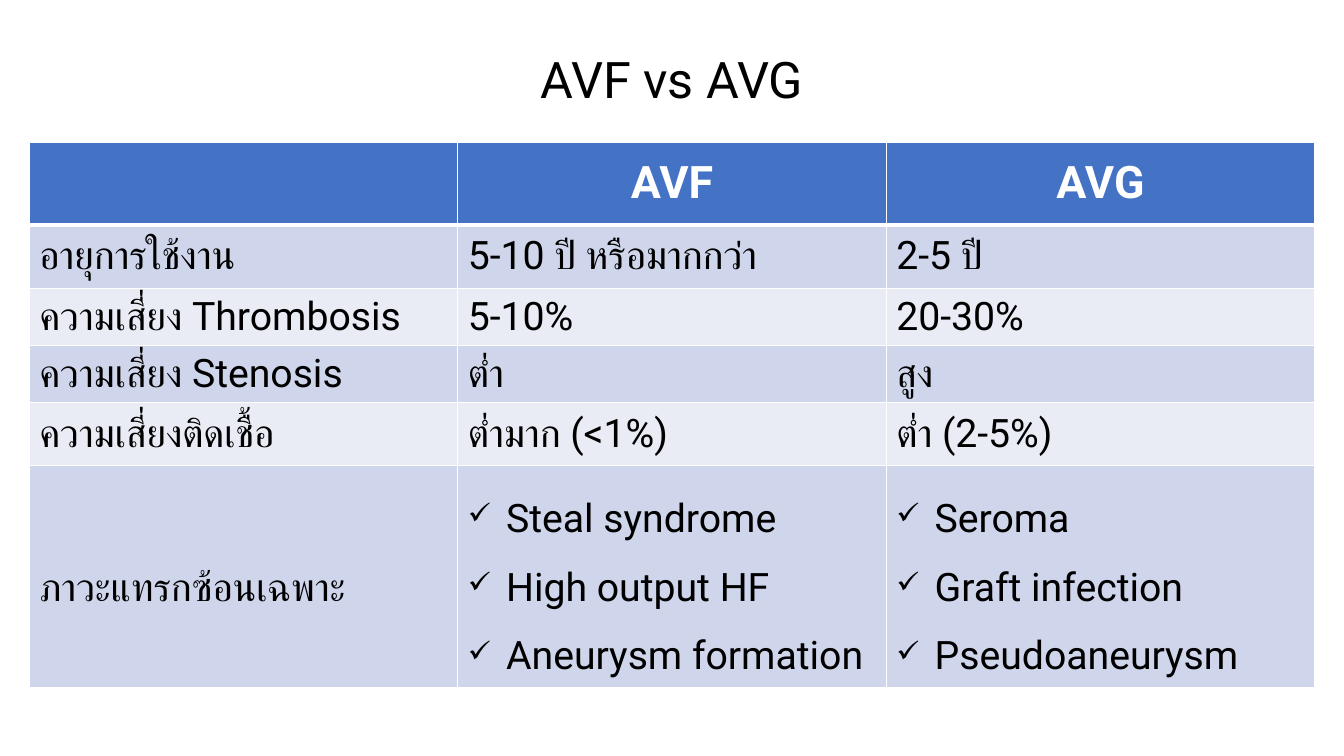
from lxml import etree
from pptx import Presentation
from pptx.dml.color import RGBColor
from pptx.enum.text import MSO_ANCHOR, MSO_AUTO_SIZE, PP_ALIGN
from pptx.oxml.ns import qn
from pptx.util import Inches, Pt

COLUMN_WIDTH = 4.25
ROW_HEIGHTS = [0.82, 0.63, 0.55, 0.57, 0.62, 2.16]
HEADINGS = ["", "AVF", "AVG"]
COMPARISON = [
    ["อายุการใช้งาน", "5-10 ปี หรือมากกว่า", "2-5 ปี"],
    ["ความเสี่ยง Thrombosis", "5-10%", "20-30%"],
    ["ความเสี่ยง Stenosis", "ต่ำ", "สูง"],
    ["ความเสี่ยงติดเชื้อ", "ต่ำมาก (<1%)", "ต่ำ (2-5%)"],
    ["ภาวะแทรกซ้อนเฉพาะ",
     ["Steal syndrome", "High output HF", "Aneurysm formation"],
     ["Seroma", "Graft infection", "Pseudoaneurysm"]],
]


def rgb(color):
    return RGBColor.from_string(color)


class SlideBuilder:
    font = "Roboto"
    black = "000000"
    white = "FFFFFF"
    header_fill = "4472C4"
    band_fills = ["CFD5EA", "E9EBF5"]

    def __init__(self, slide):
        self.slide = slide

    def add_run(self, paragraph, text, size, color, bold=False):
        run = paragraph.add_run()
        run.text = text
        run.font.size = Pt(size)
        run.font.bold = bold
        run.font.color.rgb = rgb(color)
        run.font.name = self.font
        for script in ("a:ea", "a:cs"):
            etree.SubElement(run.font._element, qn(script), typeface=self.font)

    def add_check_mark(self, paragraph):
        properties = paragraph._p.get_or_add_pPr()
        properties.set("marL", str(Inches(0.38)))
        properties.set("indent", str(Inches(-0.38)))
        etree.SubElement(properties, qn("a:buSzPct"), val="75000")
        etree.SubElement(properties, qn("a:buChar"), char="✓")

    def add_borders(self, cell, bottom_width):
        properties = cell._tc.get_or_add_tcPr()
        for side in "LRTB":
            width = bottom_width if side == "B" else 1
            line = etree.SubElement(properties, qn(f"a:ln{side}"), w=str(Pt(width)))
            fill = etree.SubElement(line, qn("a:solidFill"))
            etree.SubElement(fill, qn("a:srgbClr"), val=self.white)

    def add_title(self, text):
        box = self.slide.shapes.add_textbox(Inches(0), Inches(0.13), Inches(13.33), Inches(0.93))
        frame = box.text_frame
        frame.word_wrap = True
        frame.auto_size = MSO_AUTO_SIZE.SHAPE_TO_FIT_TEXT
        paragraph = frame.paragraphs[0]
        paragraph.alignment = PP_ALIGN.CENTER
        paragraph.line_spacing = 1.5
        self.add_run(paragraph, text, 36, self.black)

    def style_cell(self, cell, fill, bottom_width=1):
        self.add_borders(cell, bottom_width)
        cell.fill.solid()
        cell.fill.fore_color.rgb = rgb(fill)
        cell.vertical_anchor = MSO_ANCHOR.MIDDLE

    def fill_header_cell(self, cell, heading):
        self.style_cell(cell, self.header_fill, bottom_width=3)
        if heading:
            paragraph = cell.text_frame.paragraphs[0]
            paragraph.alignment = PP_ALIGN.CENTER
            self.add_run(paragraph, heading, 32, self.white, bold=True)

    def fill_body_cell(self, cell, content, fill, line_spacing):
        """Write one text, or a list of texts as check-marked lines."""
        self.style_cell(cell, fill)
        checked = isinstance(content, list)
        frame = cell.text_frame
        for index, text in enumerate(content if checked else [content]):
            paragraph = frame.add_paragraph() if index else frame.paragraphs[0]
            paragraph.line_spacing = line_spacing
            if checked:
                self.add_check_mark(paragraph)
            self.add_run(paragraph, text, 28, self.black)

    def add_comparison_table(self, headings, rows):
        shape = self.slide.shapes.add_table(
            len(rows) + 1, len(headings), Inches(0.29), Inches(1.41),
            Inches(COLUMN_WIDTH * len(headings)), Inches(sum(ROW_HEIGHTS)))
        table = shape.table
        for column in table.columns:
            column.width = Inches(COLUMN_WIDTH)
        for row, height in zip(table.rows, ROW_HEIGHTS):
            row.height = Inches(height)
        for column, heading in enumerate(headings):
            self.fill_header_cell(table.cell(0, column), heading)
        for index, contents in enumerate(rows):
            line_spacing = 1.5 if contents is rows[-1] else 1.0
            for column, content in enumerate(contents):
                self.fill_body_cell(table.cell(index + 1, column), content,
                                    self.band_fills[index % 2], line_spacing)


def main():
    presentation = Presentation()
    presentation.slide_width = Inches(13.33)
    presentation.slide_height = Inches(7.5)
    builder = SlideBuilder(presentation.slides.add_slide(presentation.slide_layouts[6]))
    builder.add_title("AVF vs AVG")
    builder.add_comparison_table(HEADINGS, COMPARISON)
    presentation.save("out.pptx")


if __name__ == "__main__":
    main()
